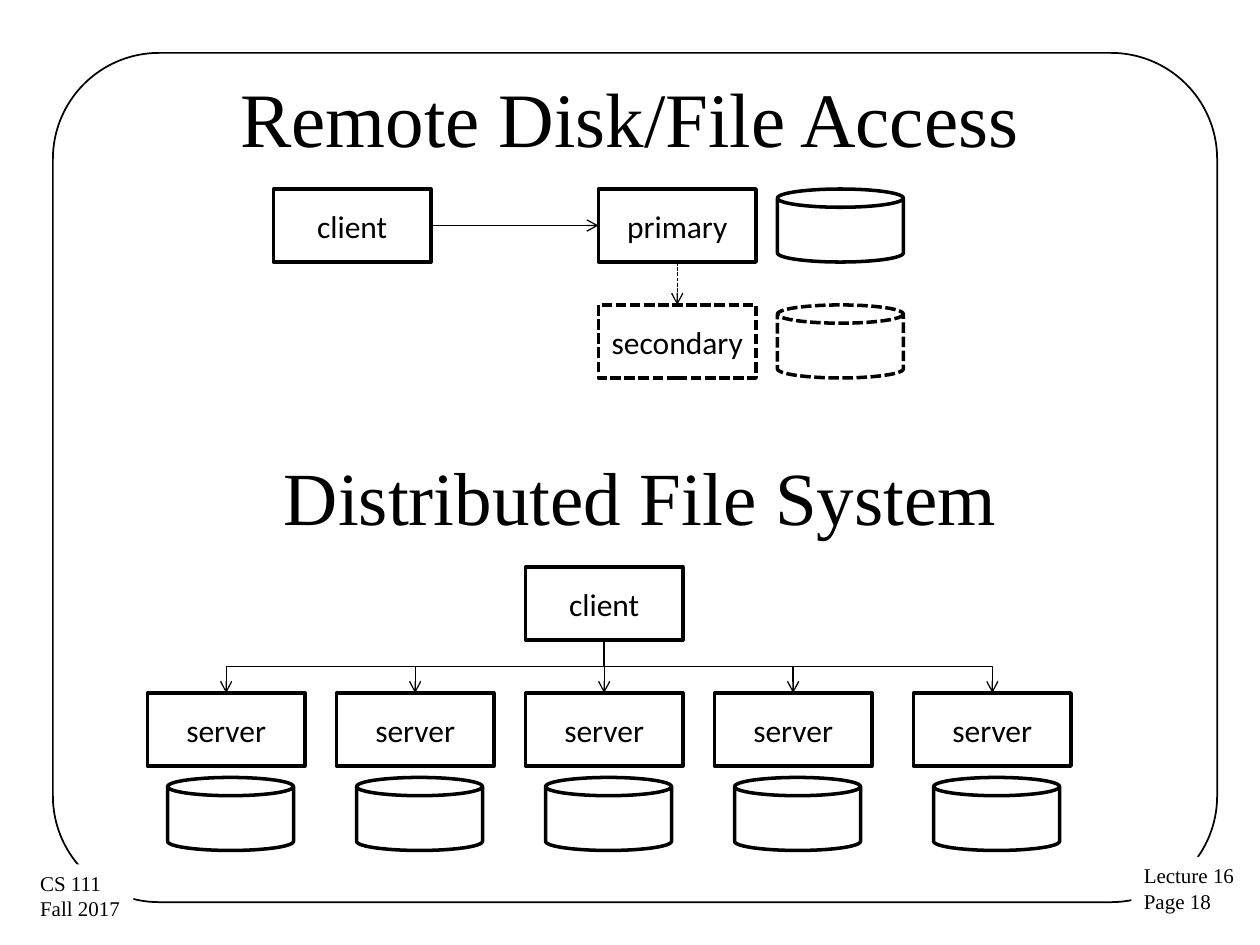
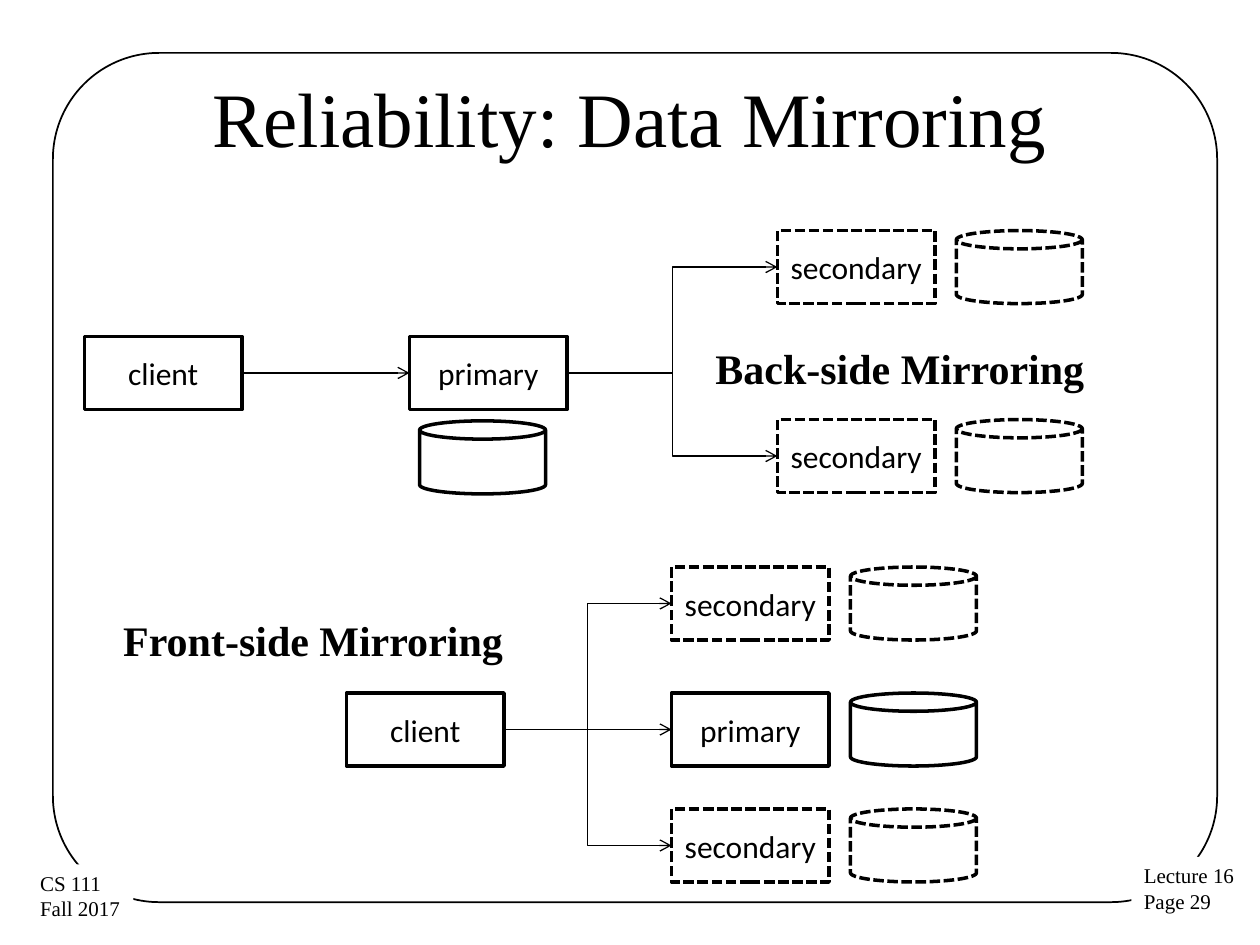
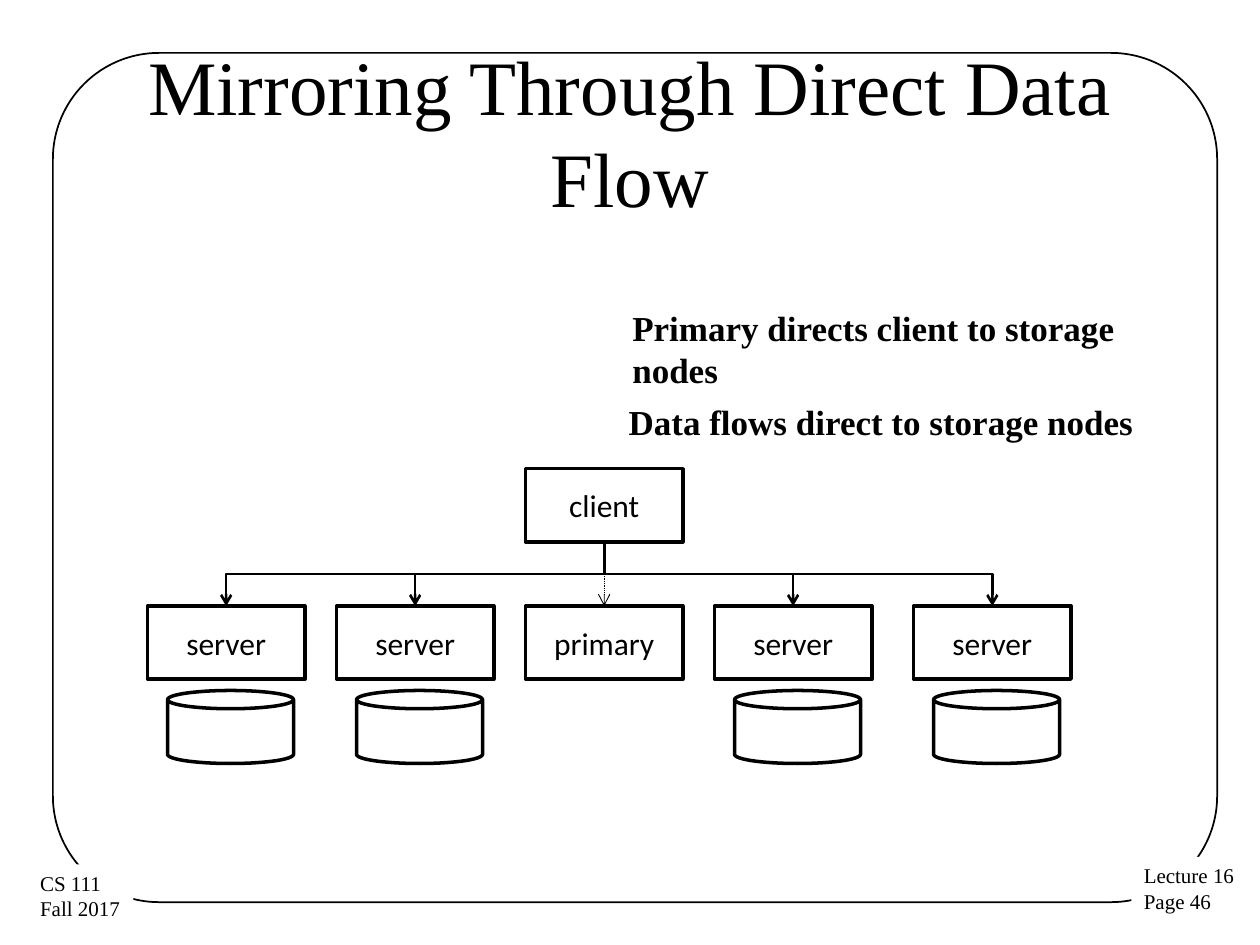
from dataclasses import dataclass
from typing import Optional

import pptx
import pptx.dml.color
import pptx.enum.dml
import pptx.enum.shapes
import pptx.enum.text
import pptx.oxml
import pptx.oxml.ns
import pptx.util
from pptx.util import Inches

BLACK = "000000"
WHITE = "FFFFFF"
SERIF = "Times New Roman"
SANS = "Calibri"
SOLID = pptx.enum.dml.MSO_LINE.SOLID
DASHED = pptx.enum.dml.MSO_LINE.SQUARE_DOT
DOTTED = pptx.enum.dml.MSO_LINE.ROUND_DOT
SHAPE = pptx.enum.shapes.MSO_SHAPE
CONNECTOR = pptx.enum.shapes.MSO_CONNECTOR
ALIGN = pptx.enum.text.PP_ALIGN
ANCHOR = pptx.enum.text.MSO_ANCHOR

NODE_WIDTH, NODE_HEIGHT = 1.25, 0.58
DISK_WIDTH = 1.0
BESIDE = (1.42, 0.0)
BELOW = (0.16, 0.67)
BELOW_PRIMARY = (0.08, 0.67)
TOP, LEFT, BOTTOM, RIGHT = range(4)
CLIENT_LEFT = 4.17
STORAGE_LEFTS = (1.17, 2.67, CLIENT_LEFT, 5.67, 7.25)


@dataclass(frozen=True)
class Node:
    """A labelled machine; disk is the offset of its cylinder."""
    label: str
    left: float
    top: float
    dash: pptx.enum.dml.MSO_LINE = SOLID
    disk: Optional[tuple[float, float]] = None

    def side(self, site: int) -> tuple[float, float]:
        x = {LEFT: 0, RIGHT: NODE_WIDTH}.get(site, NODE_WIDTH / 2)
        y = {TOP: 0, BOTTOM: NODE_HEIGHT}.get(site, NODE_HEIGHT / 2)
        return self.left + x, self.top + y


@dataclass(frozen=True)
class Stroke:
    width: float = 0.75
    dash: pptx.enum.dml.MSO_LINE = SOLID


THIN = Stroke()


def color(value: str) -> pptx.dml.color.RGBColor:
    return pptx.dml.color.RGBColor.from_string(value)


def style_line(line, stroke: Stroke) -> None:
    line.color.rgb = color(BLACK)
    line.width = pptx.util.Pt(stroke.width)
    if stroke.dash != SOLID:
        line.dash_style = stroke.dash


def write(shape, text: str, size: float, font: str = SERIF,
          align=ALIGN.LEFT, anchor=ANCHOR.TOP, bold: bool = False, wrap: bool = True) -> None:
    frame = shape.text_frame
    frame.word_wrap = wrap
    frame.vertical_anchor = anchor
    frame.text = text
    for para in frame.paragraphs:
        para.alignment = align
        for span in para.runs:
            span.font.size = pptx.util.Pt(size)
            span.font.name = font
            span.font.bold = bold
            span.font.color.rgb = color(BLACK)


def add_text(slide, text: str, left: float, top: float, width: float, height: float,
             size: float, **style) -> None:
    box = slide.shapes.add_textbox(Inches(left), Inches(top), Inches(width), Inches(height))
    write(box, text, size, **style)


def add_heading(slide, text: str, left: float = 0.5, top: float = 0.3,
                height: float = 1.25, size: float = 44) -> None:
    add_text(slide, text, left, top, 9, height, size, align=ALIGN.CENTER, anchor=ANCHOR.MIDDLE)


def add_outline(slide, kind, left: float, top: float, width: float, height: float,
                stroke: Stroke):
    shape = slide.shapes.add_shape(kind, Inches(left), Inches(top), Inches(width), Inches(height))
    shape.shadow.inherit = False
    shape.fill.background()
    style_line(shape.line, stroke)
    return shape


def add_footer(slide, text: str, left: float, top: float, width: float) -> None:
    box = slide.shapes.add_textbox(Inches(left), Inches(top), Inches(width), Inches(0.51))
    box.fill.solid()
    box.fill.fore_color.rgb = color(WHITE)
    write(box, text, 12, wrap=False)


def add_page(deck, title: str, number: int, title_top: float = 0.3):
    """Add a slide with the rounded frame, both footers and the title."""
    slide = deck.slides.add_slide(deck.slide_layouts[6])
    frame = add_outline(slide, SHAPE.ROUNDED_RECTANGLE, 0.42, 0.42, 9.24, 6.74, Stroke(1))
    frame.adjustments[0] = 0.125
    add_footer(slide, f"Lecture 16\nPage {number}", 8.98, 6.8, 0.93)
    add_footer(slide, "CS 111\nFall 2017", 0.22, 6.86, 0.84)
    add_heading(slide, title, top=title_top)
    return slide


def add_node(slide, node: Node):
    stroke = Stroke(2, node.dash)
    box = add_outline(slide, SHAPE.RECTANGLE, node.left, node.top, NODE_WIDTH, NODE_HEIGHT, stroke)
    box.text_frame.margin_left = box.text_frame.margin_right = 0
    write(box, node.label, 18, SANS, ALIGN.CENTER, ANCHOR.MIDDLE)
    if node.disk:
        across, down = node.disk
        add_outline(slide, SHAPE.CAN, node.left + across, node.top + down,
                    DISK_WIDTH, NODE_HEIGHT, stroke)
    return box


def add_connector(slide, kind, start: tuple[float, float], end: tuple[float, float],
                  stroke: Stroke):
    """Add a connector with an open arrowhead at its end."""
    connector = slide.shapes.add_connector(kind, *map(Inches, (*start, *end)))
    style_line(connector.line, stroke)
    properties = connector.element.spPr
    line = properties.find(pptx.oxml.ns.qn("a:ln"))
    namespace = pptx.oxml.ns.nsdecls("a")
    line.append(pptx.oxml.parse_xml(f'<a:tailEnd {namespace} type="arrow"/>'))
    properties.append(pptx.oxml.parse_xml(f"<a:effectLst {namespace}/>"))
    return connector


def add_arrow(slide, source, target, from_side: int, to_side: int, stroke: Stroke = THIN) -> None:
    """Join two boxes with a straight arrow."""
    arrow = add_connector(slide, CONNECTOR.STRAIGHT, (0, 0), (1, 1), stroke)
    arrow.begin_connect(source, from_side)
    arrow.end_connect(target, to_side)


def add_elbow_across(slide, source: Node, target: Node) -> None:
    add_connector(slide, CONNECTOR.ELBOW, source.side(RIGHT), target.side(LEFT), THIN)


def add_elbow_down(slide, source: Node, target: Node, stroke: Stroke) -> None:
    """Bend down, sideways, down: an elbow turned by a quarter about its centre."""
    (start_x, start_y), (end_x, end_y) = source.side(BOTTOM), target.side(TOP)
    middle_x, middle_y = (start_x + end_x) / 2, (start_y + end_y) / 2
    to_left = end_x < start_x
    half_width = (end_y - start_y) / 2 * (1 if to_left else -1)
    half_height = abs(end_x - start_x) / 2
    elbow = add_connector(slide, CONNECTOR.ELBOW,
                          (middle_x - half_width, middle_y - half_height),
                          (middle_x + half_width, middle_y + half_height), stroke)
    elbow.element.spPr.xfrm.set("rot", str((90 if to_left else 270) * 60000))


def add_storage_tree(slide, client_top: float, row_top: float, middle: str,
                     outer: Stroke, inner: Stroke) -> None:
    """Draw a client above a row of five nodes; only servers have disks."""
    client = Node("client", CLIENT_LEFT, client_top)
    client_box = add_node(slide, client)
    for left in STORAGE_LEFTS:
        label = middle if left == CLIENT_LEFT else "server"
        node = Node(label, left, row_top, disk=BELOW if label == "server" else None)
        box = add_node(slide, node)
        if left == CLIENT_LEFT:
            add_arrow(slide, client_box, box, BOTTOM, TOP, inner)
        else:
            add_elbow_down(slide, client, node, outer)


def add_mirroring(slide, client: Node, primary: Node, secondaries: list[Node],
                  splitter: Node) -> None:
    """Join client and primary, and fan out from splitter to the secondaries."""
    add_arrow(slide, add_node(slide, client), add_node(slide, primary), RIGHT, LEFT)
    for secondary in secondaries:
        add_node(slide, secondary)
        add_elbow_across(slide, splitter, secondary)


def build_remote_access(deck) -> None:
    slide = add_page(deck, "Remote Disk/File Access", 18)
    client = add_node(slide, Node("client", 2.17, 1.5))
    primary = add_node(slide, Node("primary", 4.75, 1.5, disk=BESIDE))
    secondary = add_node(slide, Node("secondary", 4.75, 2.42, DASHED, BESIDE))
    add_arrow(slide, client, primary, RIGHT, LEFT)
    add_arrow(slide, primary, secondary, BOTTOM, TOP, Stroke(dash=DASHED))
    add_heading(slide, "Distributed File System", 0.58, 3.42, 1.03, 42.9)
    add_storage_tree(slide, 4.5, 5.5, "server", THIN, THIN)


def build_data_mirroring(deck) -> None:
    slide = add_page(deck, "Reliability: Data Mirroring", 29)
    primary = Node("primary", 3.25, 2.67, disk=BELOW_PRIMARY)
    back = [Node("secondary", 6.17, top, DASHED, BESIDE) for top in (1.83, 3.33)]
    add_mirroring(slide, Node("client", 0.67, 2.67), primary, back, primary)
    add_text(slide, "Back-side Mirroring", 5.58, 2.67, 3.5, 0.5, 24, bold=True)

    client = Node("client", 2.75, 5.5)
    front = [Node("secondary", 5.33, top, DASHED, BESIDE) for top in (4.5, 6.42)]
    add_mirroring(slide, client, Node("primary", 5.33, 5.5, disk=BESIDE), front, client)
    add_text(slide, "Front-side Mirroring", 0.88, 4.83, 3.5, 0.5, 24, bold=True)


def build_direct_flow(deck) -> None:
    slide = add_page(deck, "Mirroring Through Direct Data Flow", 46, title_top=0.41)
    add_storage_tree(slide, 3.72, 4.81, "primary", Stroke(1.5), Stroke(0.5, DOTTED))
    add_text(slide, "Data flows direct to storage nodes", 4.89, 3.13, 4.33, 0.44, 20, bold=True)
    add_text(slide, "Primary directs client to storage nodes", 4.92, 2.38, 4.33, 0.77, 20,
             bold=True)


def main() -> None:
    deck = pptx.Presentation()
    deck.slide_width, deck.slide_height = Inches(10), Inches(7.5)
    build_remote_access(deck)
    build_data_mirroring(deck)
    build_direct_flow(deck)
    deck.save("out.pptx")


if __name__ == "__main__":
    main()
